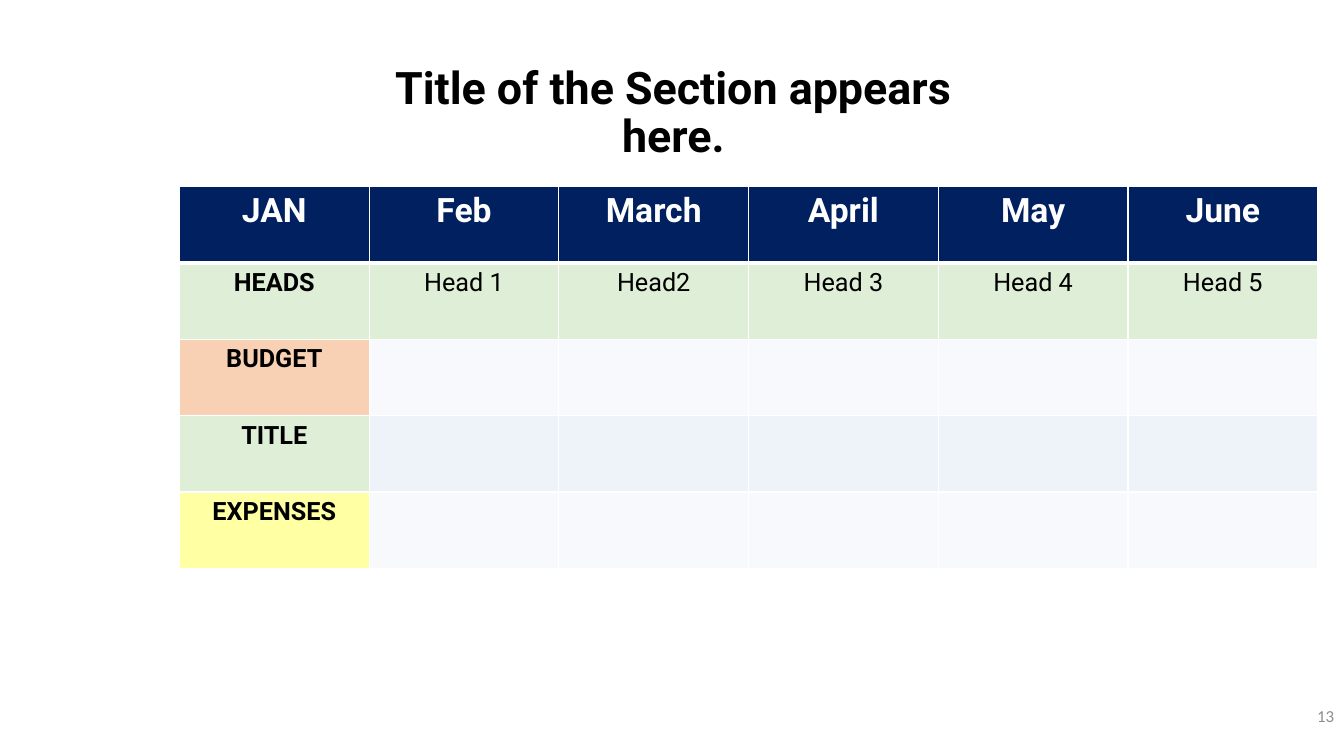
import pptx
import pptx.util
import pptx.dml.color
import pptx.enum.text
import pptx.oxml.ns
import lxml.etree

Inches, Pt = pptx.util.Inches, pptx.util.Pt
ALIGN, ANCHOR = pptx.enum.text.PP_ALIGN, pptx.enum.text.MSO_ANCHOR
COLORS = {
    "white": "FFFFFF", "black": "000000", "grey": "8C8C8C", "navy": "002060",
    "green": "A9D18E", "orange": "ED7D31", "yellow": "FFFF00",
    "light": "EAEFF7", "blue": "D2DEEF",
}
MONTHS = ["JAN", "Feb", "March", "April", "May", "June"]
HEADS = ["Head 1", "Head2", "Head 3", "Head 4", "Head 5"]
EMPTY = [""] * 5
ROWS = [
    (MONTHS, "navy", "navy"),
    (["HEADS"] + HEADS, "green", "green"),
    (["BUDGET"] + EMPTY, "orange", "light"),
    (["TITLE"] + EMPTY, "green", "blue"),
    (["EXPENSES"] + EMPTY, "yellow", "light"),
]


def rgb(name):
    """Return the named colour."""
    return pptx.dml.color.RGBColor.from_string(COLORS[name])


def set_text(tf, text, size, color, bold=False, font="Roboto", align=ALIGN.CENTER):
    """Write one formatted paragraph and return it."""
    tf.text = text
    p = tf.paragraphs[0]
    p.alignment = align
    p.font.size = Pt(size)
    for r in p.runs:
        r.font.size, r.font.bold, r.font.name = Pt(size), bold, font
        r.font.color.rgb = rgb(color)
    return p


def add_node(parent, tag, **attrs):
    """Append a DrawingML element."""
    return lxml.etree.SubElement(parent, pptx.oxml.ns.qn(tag), **attrs)


def style_cell(cell, color, header_edges, alpha=None):
    """Give a cell white borders and a fill; header_edges are 3 points wide."""
    tc_pr = cell._tc.get_or_add_tcPr()
    for edge in "LRTB":
        width = Pt(3 if edge in header_edges else 1)
        ln = add_node(tc_pr, "a:ln" + edge, w=str(width))
        add_node(add_node(ln, "a:solidFill"), "a:srgbClr", val=COLORS["white"])
    cell.fill.solid()
    cell.fill.fore_color.rgb = rgb(color)
    if alpha:
        clr = tc_pr.find(".//" + pptx.oxml.ns.qn("a:srgbClr") + "[@val='%s']" % COLORS[color])
        add_node(clr, "a:alpha", val=str(alpha * 1000))


def add_budget_table(s, left, top, width, height):
    """Place the monthly budget table in the given box."""
    table = s.shapes.add_table(len(ROWS), len(MONTHS), left, top, width, height).table
    table.horz_banding = False
    for i, (texts, first_color, rest_color) in enumerate(ROWS):
        header = i == 0
        for j, text in enumerate(texts):
            cell = table.cell(i, j)
            edges = "B" if header else "T" if i == 1 else ""
            style_cell(cell, rest_color if j else first_color, edges, None if header else 36)
            set_text(cell.text_frame, text, 24 if header else 18,
                     "white" if header else "black", header or j == 0)


def add_title(s, left, top, width, height):
    """Place the section title in the given box."""
    tf = s.shapes.add_textbox(left, top, width, height).text_frame
    tf.word_wrap = True
    p = set_text(tf, "Title of the Section appears here.", 32, "black", True)
    p.line_spacing = 0.9


def add_page_number(s, left, top, width, height):
    """Place the page number in the given box."""
    tf = s.shapes.add_textbox(left, top, width, height).text_frame
    tf.word_wrap = True
    tf.vertical_anchor = ANCHOR.MIDDLE
    set_text(tf, "13", 12, "grey", font="Calibri", align=ALIGN.RIGHT)


def main():
    """Build and save the slide."""
    prs = pptx.Presentation()
    prs.slide_width, prs.slide_height = Inches(13.33), Inches(7.5)
    s = prs.slides.add_slide(prs.slide_layouts[6])
    add_budget_table(s, Inches(1.78), Inches(1.85), Inches(11.29), Inches(3.79))
    add_page_number(s, Inches(10.33), Inches(6.9), Inches(3), Inches(0.4))
    add_title(s, Inches(3.28), Inches(0.6), Inches(6.8), Inches(0.59))
    prs.save("out.pptx")


if __name__ == "__main__":
    main()
